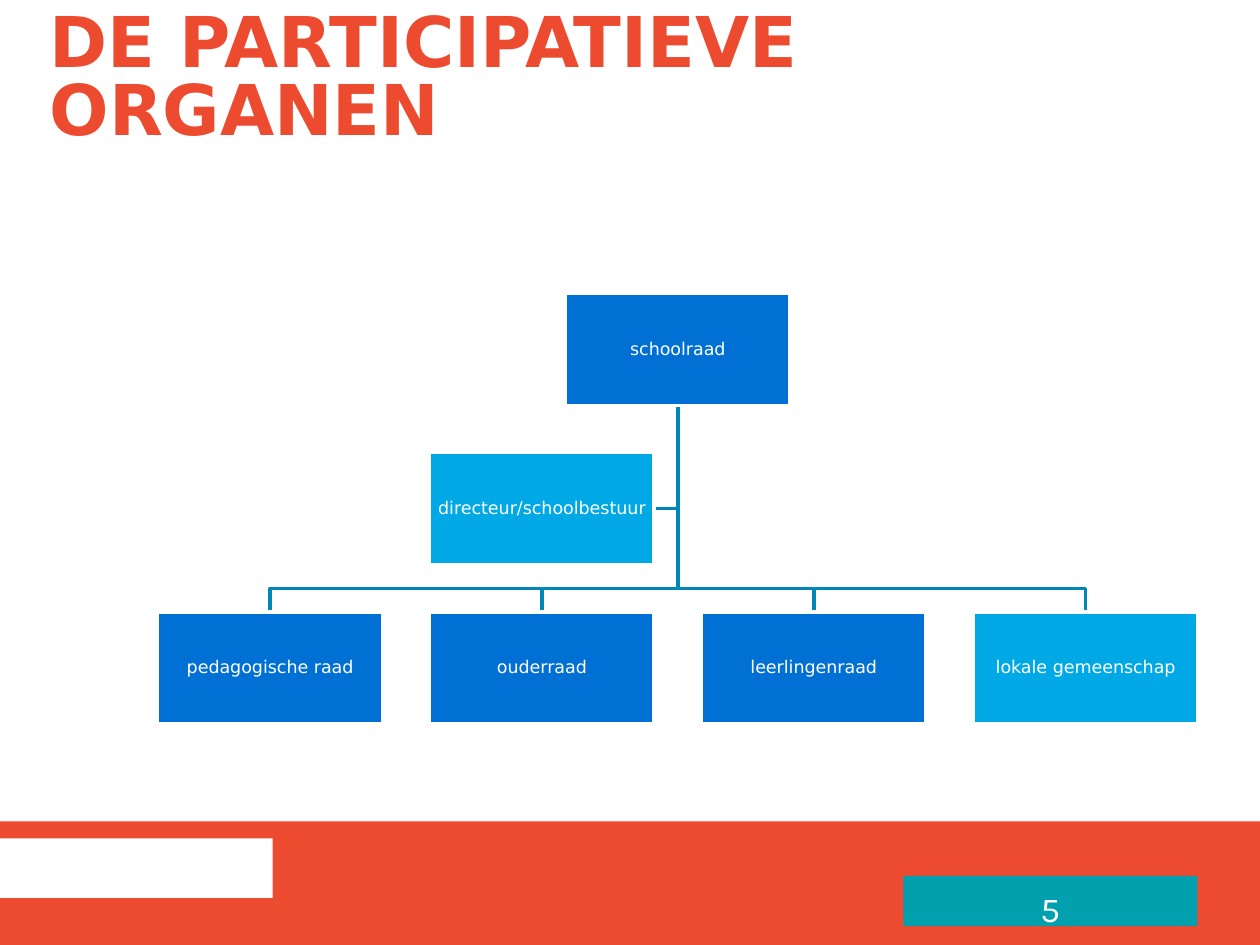
from dataclasses import dataclass

from pptx import Presentation
from pptx.dml.color import RGBColor
from pptx.enum.shapes import MSO_SHAPE
from pptx.enum.text import MSO_ANCHOR, MSO_AUTO_SIZE, PP_ALIGN
from pptx.util import Cm, Pt

RECTANGLE = MSO_SHAPE.RECTANGLE
MIDDLE = MSO_ANCHOR.MIDDLE
LEFT, CENTER = PP_ALIGN.LEFT, PP_ALIGN.CENTER
NO_AUTOFIT = MSO_AUTO_SIZE.NONE
TITLE_ONLY = 5


@dataclass(frozen=True)
class Theme:
    red: str = "EC4B2F"
    teal: str = "00A0AE"
    blue: str = "0070D5"
    sky: str = "00A9E5"
    line: str = "0087B7"
    white: str = "FFFFFF"
    font: str = "DejaVu Sans"
    number_font: str = "Karla"
    title_size: int = 40
    number_size: int = 20
    label_size: int = 10
    line_width: int = 2


@dataclass(frozen=True)
class Node:
    label: str
    left: float
    top: float
    fill: str

    @property
    def middle(self) -> float:
        return self.left + NODE_WIDTH / 2


THEME = Theme()

# Chart grid, in centimetres
NODE_WIDTH, NODE_HEIGHT = 4.53, 2.26
FIRST_LEFT, STEP = 3.18, 5.48
ROOT_TOP, AIDE_TOP, ROW_TOP = 5.92, 9.12, 12.34
BUS_TOP = 11.86

ROOT = Node("schoolraad", FIRST_LEFT + 1.5 * STEP, ROOT_TOP, THEME.blue)
AIDE = Node("directeur/schoolbestuur", FIRST_LEFT + STEP, AIDE_TOP, THEME.sky)
COUNCILS = [
    Node(label, FIRST_LEFT + index * STEP, ROW_TOP, fill)
    for index, (label, fill) in enumerate([
        ("pedagogische raad", THEME.blue),
        ("ouderraad", THEME.blue),
        ("leerlingenraad", THEME.blue),
        ("lokale gemeenschap", THEME.sky),
    ])
]


def write(shape, text: str, *, size: int, font: str = THEME.font,
          color: str = THEME.white, bold: bool = False, align=CENTER,
          spacing: float = 1.0, margins=(0, 0, 0, 0), wrap: bool = True) -> None:
    """Fill a shape with one paragraph; margins are left, top, right, bottom."""
    frame = shape.text_frame
    frame.auto_size = NO_AUTOFIT
    frame.word_wrap = wrap
    frame.vertical_anchor = MIDDLE
    (frame.margin_left, frame.margin_top,
     frame.margin_right, frame.margin_bottom) = map(Cm, margins)
    para = frame.paragraphs[0]
    para.alignment = align
    para.line_spacing = spacing
    span = para.add_run()
    span.text = text
    span.font.name = font
    span.font.size = Pt(size)
    span.font.bold = bold
    span.font.color.rgb = RGBColor.from_string(color)


def add_box(page, left: float, top: float, width: float, height: float,
            fill: str, outline: str | None = None):
    box = page.shapes.add_shape(RECTANGLE, Cm(left), Cm(top), Cm(width), Cm(height))
    box.shadow.inherit = False
    box.fill.solid()
    box.fill.fore_color.rgb = RGBColor.from_string(fill)
    if outline:
        box.line.color.rgb = RGBColor.from_string(outline)
        box.line.width = Pt(THEME.line_width)
    else:
        box.line.fill.background()
    return box


def add_elbow(page, points: list[tuple[float, float]]) -> None:
    start, *others = [(Cm(x), Cm(y)) for x, y in points]
    builder = page.shapes.build_freeform(*start)
    builder.add_line_segments(others, close=False)
    elbow = builder.convert_to_shape()
    elbow.shadow.inherit = False
    elbow.fill.background()
    elbow.line.color.rgb = RGBColor.from_string(THEME.line)
    elbow.line.width = Pt(THEME.line_width)


def add_node(page, node: Node) -> None:
    box = add_box(page, node.left, node.top, NODE_WIDTH, NODE_HEIGHT,
                  node.fill, THEME.white)
    write(box, node.label, size=THEME.label_size, spacing=0.9,
          margins=(0.02, 0.02, 0.02, 0.02))


def main() -> None:
    deck = Presentation()
    deck.slide_width, deck.slide_height = Cm(25.4), Cm(19.05)
    page = deck.slides.add_slide(deck.slide_layouts[TITLE_ONLY])

    # Footer band
    add_box(page, 0, 16.56, 25.4, 2.49, THEME.red)
    add_box(page, 0, 16.9, 5.5, 1.2, THEME.white)

    # Title
    title = page.shapes.title
    title.left, title.top, title.width, title.height = Cm(0), Cm(0), Cm(25.4), Cm(3.18)
    write(title, "DE PARTICIPATIEVE ORGANEN", size=THEME.title_size,
          color=THEME.red, bold=True, align=LEFT, spacing=0.8,
          margins=(1, 0.5, 1, 0.4))

    # Page number
    number = add_box(page, 18.21, 17.66, 5.93, 1.01, THEME.teal)
    write(number, "5", size=THEME.number_size, font=THEME.number_font,
          margins=(0, 0.3, 0, 0), wrap=False)

    # Connecting lines, behind the boxes
    trunk = (ROOT.middle, ROOT_TOP + NODE_HEIGHT)
    aide_middle = AIDE_TOP + NODE_HEIGHT / 2
    add_elbow(page, [trunk, (ROOT.middle, aide_middle),
                     (AIDE.left + NODE_WIDTH, aide_middle)])
    for council in COUNCILS:
        add_elbow(page, [trunk, (ROOT.middle, BUS_TOP),
                         (council.middle, BUS_TOP), (council.middle, ROW_TOP)])

    # Organisation boxes
    for node in [ROOT, *COUNCILS, AIDE]:
        add_node(page, node)

    deck.save("out.pptx")


if __name__ == "__main__":
    main()
